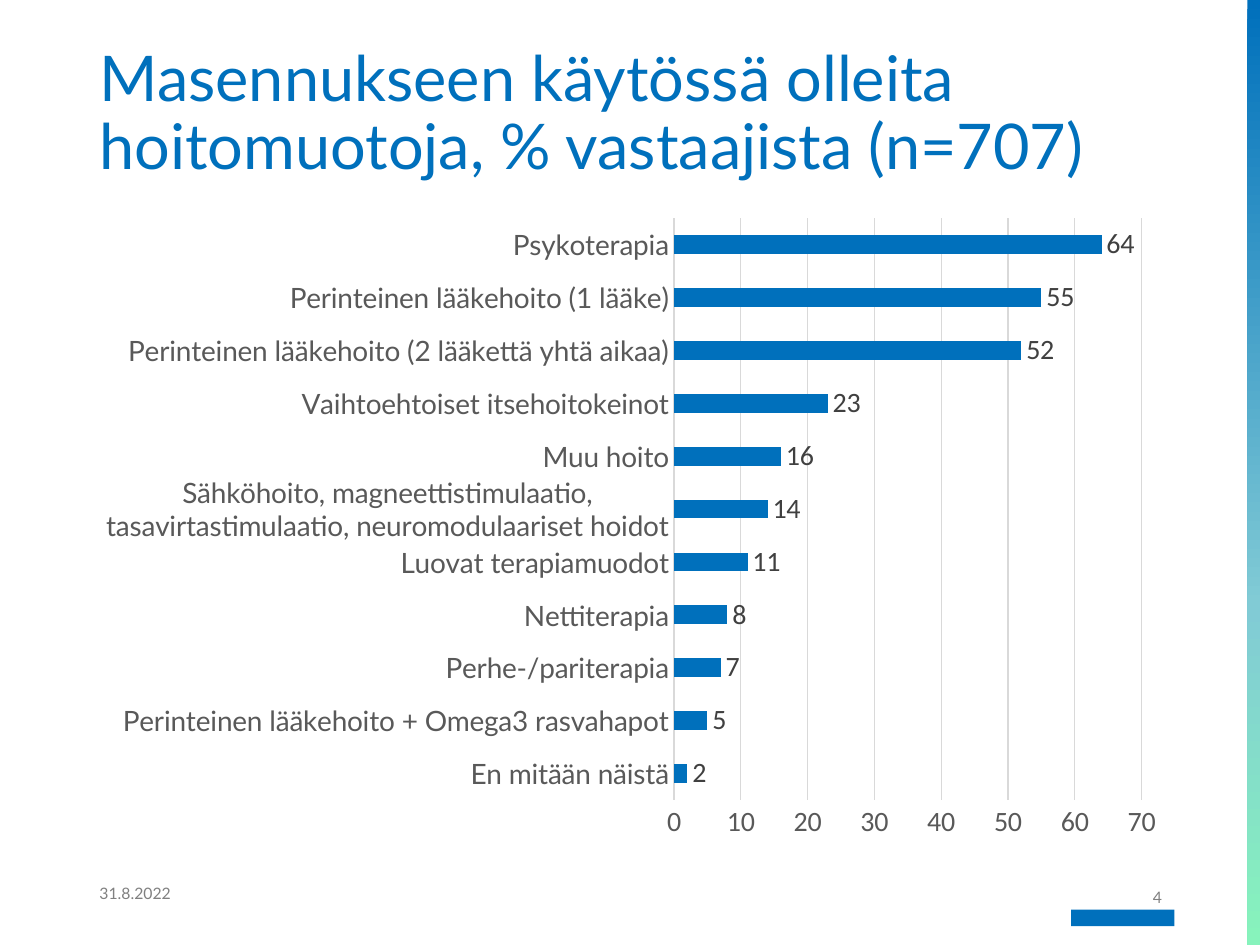
"""Build a slide with a bar chart of the treatments used for depression."""
import copy

import pptx
import pptx.chart.data
import pptx.dml.color
import pptx.enum.chart
import pptx.enum.shapes
import pptx.enum.text
import pptx.oxml
import pptx.oxml.ns
import pptx.util

THEME = {
    "blue": "0070BC", "sky": "81CBD5", "mint": "87F3BC", "rule": "D9D9D9",
    "axis": "595959", "label": "404040", "foot": "808080",
    "head": "Lato", "body": "Calibri", "big": 36, "mid": 16, "small": 9,
}
COLS, ROWS = 100, 75
CELL = pptx.util.Inches(0.1)
color = {key: pptx.dml.color.RGBColor.from_string(THEME[key])
         for key in ("blue", "sky", "mint", "rule", "axis", "label", "foot")}
align = pptx.enum.text.PP_ALIGN


def grid(*cells):
    return [pptx.util.Emu(round(cell * CELL)) for cell in cells]


def write(shape, text, size="small", tint="foot", side=align.LEFT, space=1.0):
    frame = shape.text_frame
    frame.word_wrap = True
    frame.auto_size = pptx.enum.text.MSO_AUTO_SIZE.NONE
    frame.vertical_anchor = pptx.enum.text.MSO_ANCHOR.MIDDLE
    line = frame.paragraphs[0]
    line.alignment, line.line_spacing = side, space
    run = line.add_run()
    run.text = text
    run.font.name, run.font.size = THEME["head"], pptx.util.Pt(THEME[size])
    run.font.color.rgb = color[tint]


deck = pptx.Presentation()
deck.slide_width, deck.slide_height = grid(COLS, ROWS)
slide = deck.slides.add_slide(deck.slide_layouts[5])
shapes = slide.shapes

rect = pptx.enum.shapes.MSO_SHAPE.RECTANGLE
mark = shapes.add_shape(rect, *grid(85, 72.2, 8.2, 1.3))
edge = shapes.add_shape(rect, *grid(99, 0, 1, ROWS))
for shape in (mark, edge):
    shape.shadow.inherit = False
    shape.line.fill.background()
mark.fill.solid()
mark.fill.fore_color.rgb = color["blue"]

edge.fill.gradient()
edge.fill.gradient_angle = 270
stops = edge.fill.gradient_stops
first = edge._element.find(".//" + pptx.oxml.ns.qn("a:gs"))
first.addnext(copy.deepcopy(first))
for stop, tint, spot in zip(stops, ("blue", "sky", "mint"), (0, 0.64, 1)):
    stop.color.rgb, stop.position = color[tint], spot

title = shapes.title
title.left, title.top, title.width, title.height = grid(6.9, 4.3, 86.2, 9.7)
write(title, "Masennukseen käytössä olleita hoitomuotoja, % vastaajista (n=707)",
      size="big", tint="blue", space=0.9)

rates = {
    "En mitään näistä": 2,
    "Perinteinen lääkehoito + Omega3 rasvahapot": 5,
    "Perhe-/pariterapia": 7,
    "Nettiterapia": 8,
    "Luovat terapiamuodot": 11,
    "Sähköhoito, magneettistimulaatio, tasavirtastimulaatio, "
    "neuromodulaariset hoidot": 14,
    "Muu hoito": 16,
    "Vaihtoehtoiset itsehoitokeinot": 23,
    "Perinteinen lääkehoito (2 lääkettä yhtä aikaa)": 52,
    "Perinteinen lääkehoito (1 lääke)": 55,
    "Psykoterapia": 64,
}
data = pptx.chart.data.CategoryChartData(number_format="0")
data.categories = list(rates)
data.add_series("Series 1", list(rates.values()))
kinds = pptx.enum.chart
chart = shapes.add_chart(kinds.XL_CHART_TYPE.BAR_CLUSTERED,
                         *grid(6.9, 16.3, 86.3, 51.3), data).chart
chart.has_title = chart.has_legend = False
chart.font.name, chart.font.size = THEME["body"], pptx.util.Pt(THEME["mid"])

names, scale = chart.category_axis, chart.value_axis
for axis, face in ((names, "head"), (scale, "body")):
    axis.major_tick_mark = axis.minor_tick_mark = kinds.XL_TICK_MARK.NONE
    font = axis.tick_labels.font
    font.name, font.size = THEME[face], pptx.util.Pt(THEME["mid"])
    font.color.rgb = color["axis"]
scale.minimum_scale, scale.maximum_scale, scale.major_unit = 0, 70, 10
scale.tick_labels.number_format = "0"
scale.tick_labels.number_format_is_linked = False
scale.format.line.fill.background()
for line in (names.format.line, scale.major_gridlines.format.line):
    line.color.rgb, line.width = color["rule"], pptx.util.Pt(0.75)

plot = chart.plots[0]
plot.gap_width, plot.vary_by_categories = 182, False
bars = plot.series[0]
bars.format.fill.solid()
bars.format.fill.fore_color.rgb = color["blue"]
tags = bars.data_labels
tags.show_value = True
tags.position = kinds.XL_LABEL_POSITION.OUTSIDE_END
tags.number_format, tags.number_format_is_linked = "0", False
tags.font.name, tags.font.size = THEME["body"], pptx.util.Pt(THEME["mid"])
tags.font.color.rgb = color["label"]

area = chart._chartSpace.find(".//" + pptx.oxml.ns.qn("c:plotArea"))
for old in area.findall(pptx.oxml.ns.qn("c:layout")):
    area.remove(old)
parts = (("xMode", "edge"), ("yMode", "edge"),
         ("x", 0.54), ("y", 0.02), ("w", 0.43), ("h", 0.9))
inner = "".join(f'<c:{tag} val="{value}"/>' for tag, value in parts)
area.insert(0, pptx.oxml.parse_xml(
    f'<c:layout {pptx.oxml.ns.nsdecls("c")}><c:manualLayout>'
    f'<c:layoutTarget val="inner"/>{inner}</c:manualLayout></c:layout>'))

write(shapes.add_textbox(*grid(6.9, 68.9, 22.5, 4)), "31.8.2022")
write(shapes.add_textbox(*grid(78.4, 68.9, 14.8, 4.6)), "4", side=align.RIGHT)

deck.save("out.pptx")
